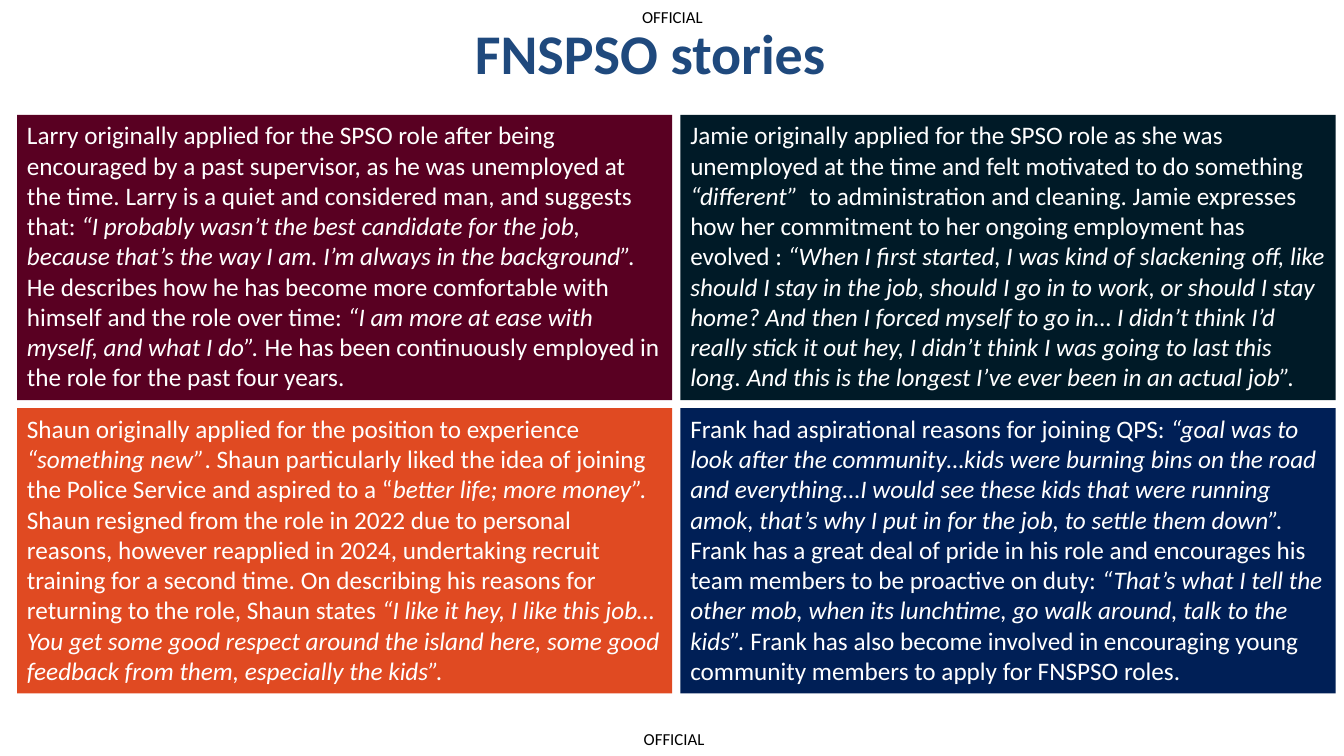
from pptx import Presentation
from pptx.dml.color import RGBColor as RGB
from pptx.enum.shapes import MSO_SHAPE as Shape
from pptx.enum.text import MSO_ANCHOR as Anchor, MSO_AUTO_SIZE as Fit, PP_ALIGN as Align
from pptx.util import Pt

COLORS = {
    "black": "000000",
    "white": "FFFFFF",
    "title": "1F497D",
    "plum": "590022",
    "teal": "001A27",
    "orange": "E04A22",
    "navy": "001F56",
}


def write(frame, parts, size=18, color="white", bold=False, align=Align.LEFT,
          anchor=Anchor.TOP, wrap=True, inset=None, fit=Fit.NONE):
    frame.word_wrap = wrap
    frame.auto_size = fit
    frame.vertical_anchor = anchor
    if inset is not None:
        frame.margin_left = frame.margin_right = Pt(inset)
        frame.margin_top = frame.margin_bottom = Pt(inset)
    para = frame.paragraphs[0]
    para.alignment = align
    for i, part in enumerate(parts):
        run = para.add_run()
        run.text = part
        run.font.name = "Calibri"
        run.font.size = Pt(size)
        run.font.bold = bold
        run.font.italic = i % 2 == 1
        run.font.color.rgb = RGB.from_string(COLORS[color])


deck = Presentation()
deck.slide_width, deck.slide_height = Pt(960), Pt(540)
slide = deck.slides.add_slide(deck.slide_layouts[6])
shapes = slide.shapes

for left, top in [(458.6, 5), (459.8, 520.6)]:
    label = shapes.add_textbox(Pt(left), Pt(top), Pt(46), Pt(14.4))
    write(label.text_frame, ["OFFICIAL"], size=12, color="black", wrap=False, inset=0)

title = shapes.add_textbox(Pt(32.4), Pt(-7.9), Pt(864), Pt(90))
write(title.text_frame, ["FNSPSO stories"], size=40, color="title", bold=True,
      align=Align.CENTER, anchor=Anchor.MIDDLE)

STORIES = [
    ("plum", [
        "Larry originally applied for the SPSO role after being encouraged by a past "
        "supervisor, as he was unemployed at the time. Larry is a quiet and considered "
        "man, and suggests that: ",
        "“I probably wasn’t the best candidate for the job, because that’s the way I am. "
        "I’m always in the background”. ",
        "He describes how he has become more comfortable with himself and the role over time: ",
        "“I am more at ease with myself, and what I do”.",
        " He has been continuously employed in the role for the past four years.",
    ]),
    ("teal", [
        "Jamie originally applied for the SPSO role as she was unemployed at the time "
        "and felt motivated to do something ",
        "“different” ",
        " to administration and cleaning. Jamie expresses how her commitment to her "
        "ongoing employment has evolved : ",
        "“When I first started, I was kind of slackening off, like should I stay in the "
        "job, should I go in to work, or should I stay home? And then I forced myself to "
        "go in… I didn’t think I’d really stick it out hey, I didn’t think I was going to "
        "last this long. And this is the longest I’ve ever been in an actual job”.",
    ]),
    ("orange", [
        "Shaun originally applied for the position to experience ",
        "“something new”",
        ". Shaun particularly liked the idea of joining the Police Service and aspired to a “",
        "better life; more money”. ",
        "Shaun resigned from the role in 2022 due to personal reasons, however reapplied "
        "in 2024, undertaking recruit training for a second time. On describing his "
        "reasons for returning to the role, Shaun states ",
        "“I like it hey, I like this job…You get some good respect around the island here, "
        "some good feedback from them, especially the kids”.",
    ]),
    ("navy", [
        "Frank had aspirational reasons for joining QPS: ",
        "“goal was to look after the community…kids were burning bins on the road and "
        "everything…I would see these kids that were running amok, that’s why I put in "
        "for the job, to settle them down”. ",
        "Frank has a great deal of pride in his role and encourages his team members to "
        "be proactive on duty: ",
        "“That’s what I tell the other mob, when its lunchtime, go walk around, talk to "
        "the kids”. ",
        "Frank has also become involved in encouraging young community members to apply "
        "for FNSPSO roles.",
    ]),
]

LEFT, TOP, WIDE, HIGH, GAP = 12.2, 82, 468, 203.8, 5.8

for i, (color, parts) in enumerate(STORIES):
    row, col = divmod(i, 2)
    card = shapes.add_shape(Shape.RECTANGLE, Pt(LEFT + col * (WIDE + GAP)),
                            Pt(TOP + row * (HIGH + GAP)), Pt(WIDE), Pt(HIGH))
    card.shadow.inherit = False
    card.fill.solid()
    card.fill.fore_color.rgb = RGB.from_string(COLORS[color])
    card.line.fill.background()
    write(card.text_frame, parts, fit=Fit.SHAPE_TO_FIT_TEXT)

deck.save("out.pptx")
